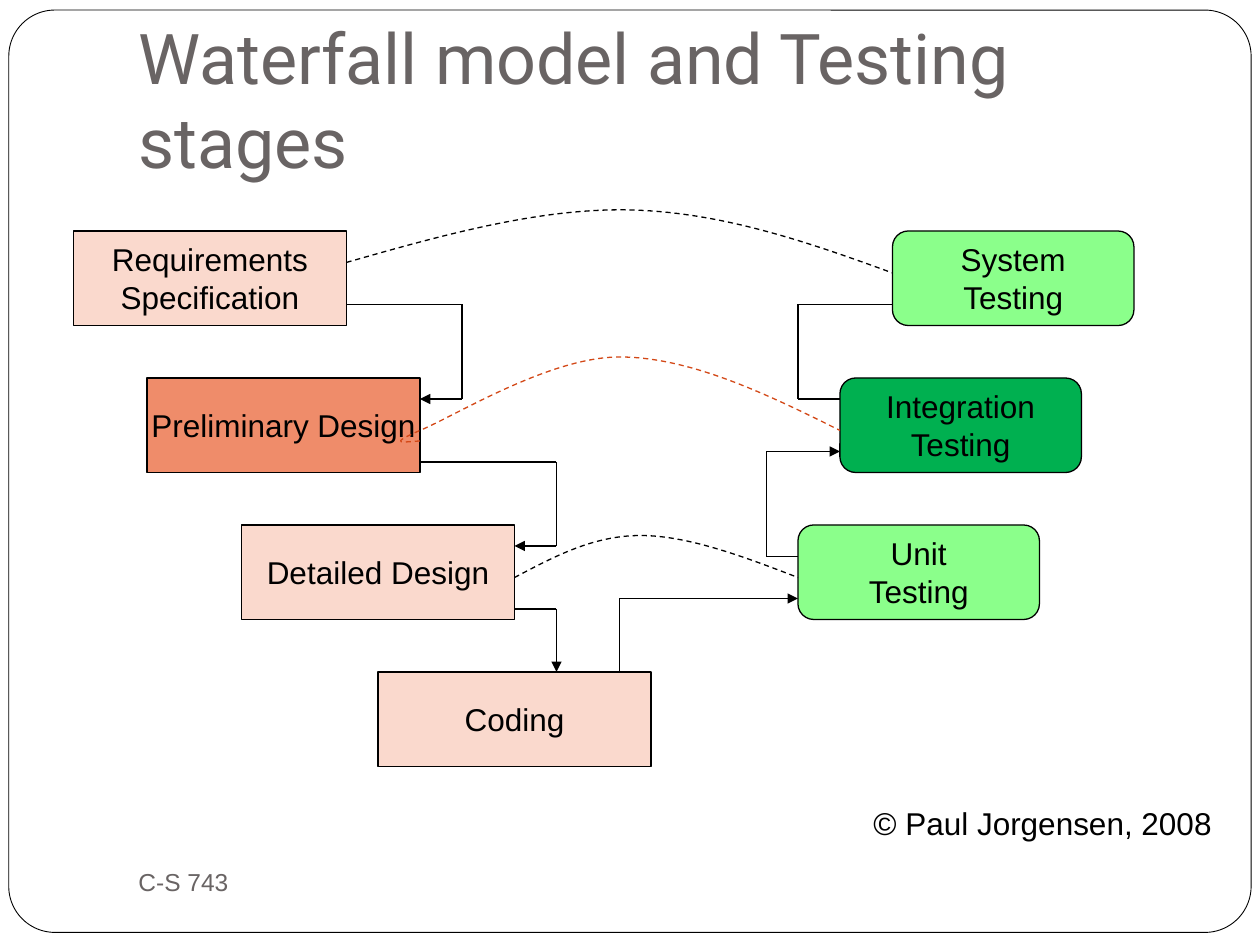
from itertools import pairwise

from pptx import Presentation
from pptx import util as u
from pptx.dml.color import RGBColor
from pptx.enum import dml, shapes, text
from pptx.oxml import ns, xmlchemy

COLS = 120
BLACK = RGBColor(0, 0, 0)
WHITE = RGBColor(255, 255, 255)
GRAY = RGBColor(0x69, 0x64, 0x64)
PEACH = RGBColor(0xFA, 0xD9, 0xCD)
CORAL = RGBColor(0xEF, 0x8C, 0x6A)
LIME = RGBColor(0x8B, 0xFF, 0x8B)
GREEN = RGBColor(0, 0xB0, 0x50)
RUST = RGBColor(0xD3, 0x48, 0x17)
RECT = shapes.MSO_SHAPE.RECTANGLE
ROUND = shapes.MSO_SHAPE.ROUNDED_RECTANGLE

STAGES = [
    (RECT, 7, 22, 26, PEACH, "Requirements\nSpecification"),
    (RECT, 14, 36, 26, CORAL, "Preliminary Design"),
    (RECT, 23, 50, 26, PEACH, "Detailed Design"),
    (RECT, 36, 64, 26, PEACH, "Coding"),
    (ROUND, 76, 50, 23, LIME, "Unit\nTesting"),
    (ROUND, 80, 36, 23, GREEN, "Integration\nTesting"),
    (ROUND, 85, 22, 23, LIME, "System\nTesting"),
]
ROUTES = [
    ([(33, 29), (44, 29), (44, 38), (40, 38)], True),
    ([(40, 44), (53, 44), (53, 52), (49, 52)], True),
    ([(49, 58), (53, 58), (53, 64)], True),
    ([(59, 64), (59, 57), (76, 57)], True),
    ([(76, 53), (73, 53), (73, 43), (80, 43)], True),
    ([(85, 29), (76, 29), (76, 38), (80, 38)], False),
]
CURVES = [
    (BLACK, [(33, 25), (42.1, 22.4), (51.4, 19.8), (60, 20),
             (68.6, 20.2), (76.8, 23), (85, 26)]),
    (RUST, [(40, 42), (38.4, 42.1), (36.8, 42.4), (40, 41), (43.2, 39.7),
            (52.3, 34), (59, 34), (65.6, 34), (72.8, 37.4), (80, 41)]),
    (BLACK, [(49, 55), (52.8, 53), (56.5, 51), (61, 51),
             (65.5, 51), (70.8, 53), (76, 55)]),
]


def grid(*cells):
    """Turn grid cells into lengths."""
    return [u.Inches(10 * c / COLS) for c in cells]


def style(frame, size, color, align, anchor, font="Arial"):
    """Format all the paragraphs of a text frame."""
    frame.vertical_anchor = anchor
    for par in frame.paragraphs:
        par.alignment = align
        par.font.name, par.font.size = font, u.Pt(size)
        par.font.color.rgb = color


def add_box(slide, kind, spot, fill, width=0.75):
    """Add a filled and outlined shape."""
    box = slide.shapes.add_shape(kind, *grid(*spot))
    box.shadow.inherit = False
    box.fill.solid()
    box.fill.fore_color.rgb = fill
    box.line.color.rgb = BLACK
    box.line.width = u.Pt(width)
    return box


def add_frame(slide):
    """Add the rounded page border behind everything else."""
    box = add_box(slide, ROUND, (0.84, 0.96, 118.32, 87.84), WHITE, 0.5)
    box.adjustments[0] = 0.05
    slide.shapes._spTree.insert(2, box._element)


def add_title(slide, words):
    """Fill and place the title."""
    title = slide.shapes.title
    title.left, title.top, title.width, title.height = grid(12, 3.6, 102, 15)
    frame = title.text_frame
    frame.text = words
    frame.auto_size = text.MSO_AUTO_SIZE.NONE
    frame.margin_bottom = u.Inches(0.1)
    style(frame, 40, GRAY, text.PP_ALIGN.LEFT, text.MSO_ANCHOR.BOTTOM, "Roboto")


def add_stage(slide, kind, col, row, wide, fill, words):
    """Add one labelled project stage."""
    frame = add_box(slide, kind, (col, row, wide, 9), fill).text_frame
    frame.text = words
    frame.word_wrap = False
    style(frame, 18, BLACK, text.PP_ALIGN.CENTER, text.MSO_ANCHOR.MIDDLE)


def add_note(slide, words, spot, size, color, anchor):
    """Add a plain line of text."""
    frame = slide.shapes.add_textbox(*grid(*spot)).text_frame
    frame.text = words
    frame.word_wrap = True
    style(frame, size, color, text.PP_ALIGN.LEFT, anchor)


def add_route(slide, points, arrow):
    """Join points with straight lines, with an arrowhead at the end."""
    for start, end in pairwise(points):
        line = slide.shapes.add_connector(
            shapes.MSO_CONNECTOR.STRAIGHT, *grid(*start, *end))
        line.line.color.rgb = BLACK
        line.line.width = u.Pt(0.75)
        props = line._element.spPr
        props.append(xmlchemy.OxmlElement("a:effectLst"))
    if arrow:
        head = xmlchemy.OxmlElement("a:tailEnd")
        head.set("type", "triangle")
        line.line._get_or_add_ln().append(head)


def add_curve(slide, color, points):
    """Add a dashed Bezier curve through every third point."""
    first, *rest = [grid(*p) for p in points]
    pen = slide.shapes.build_freeform(*first)
    pen.add_line_segments(rest, close=False)
    curve = pen.convert_to_shape()
    curve.shadow.inherit = False
    curve.fill.background()
    curve.line.color.rgb = color
    curve.line.width = u.Pt(0.75)
    curve.line.dash_style = dml.MSO_LINE.DASH
    track = curve._element.find(".//" + ns.qn("a:path"))
    legs = track.findall(ns.qn("a:lnTo"))
    for i in range(0, len(legs), 3):
        bend = xmlchemy.OxmlElement("a:cubicBezTo")
        for leg in legs[i:i + 3]:
            bend.append(leg[0])
            track.remove(leg)
        track.append(bend)


def main():
    """Build the slide."""
    deck = Presentation()
    deck.slide_width, deck.slide_height = grid(COLS, 90)
    slide = deck.slides.add_slide(deck.slide_layouts[5])
    add_frame(slide)
    add_title(slide, "Waterfall model and Testing stages")
    add_note(slide, "C-S 743", (12, 81, 52, 6), 14, GRAY,
             text.MSO_ANCHOR.MIDDLE)
    for stage in STAGES:
        add_stage(slide, *stage)
    add_note(slide, "© Paul Jorgensen, 2008", (82, 76, 36, 4.8), 18, BLACK,
             text.MSO_ANCHOR.TOP)
    for route in ROUTES:
        add_route(slide, *route)
    for curve in CURVES:
        add_curve(slide, *curve)
    deck.save("out.pptx")


if __name__ == "__main__":
    main()
